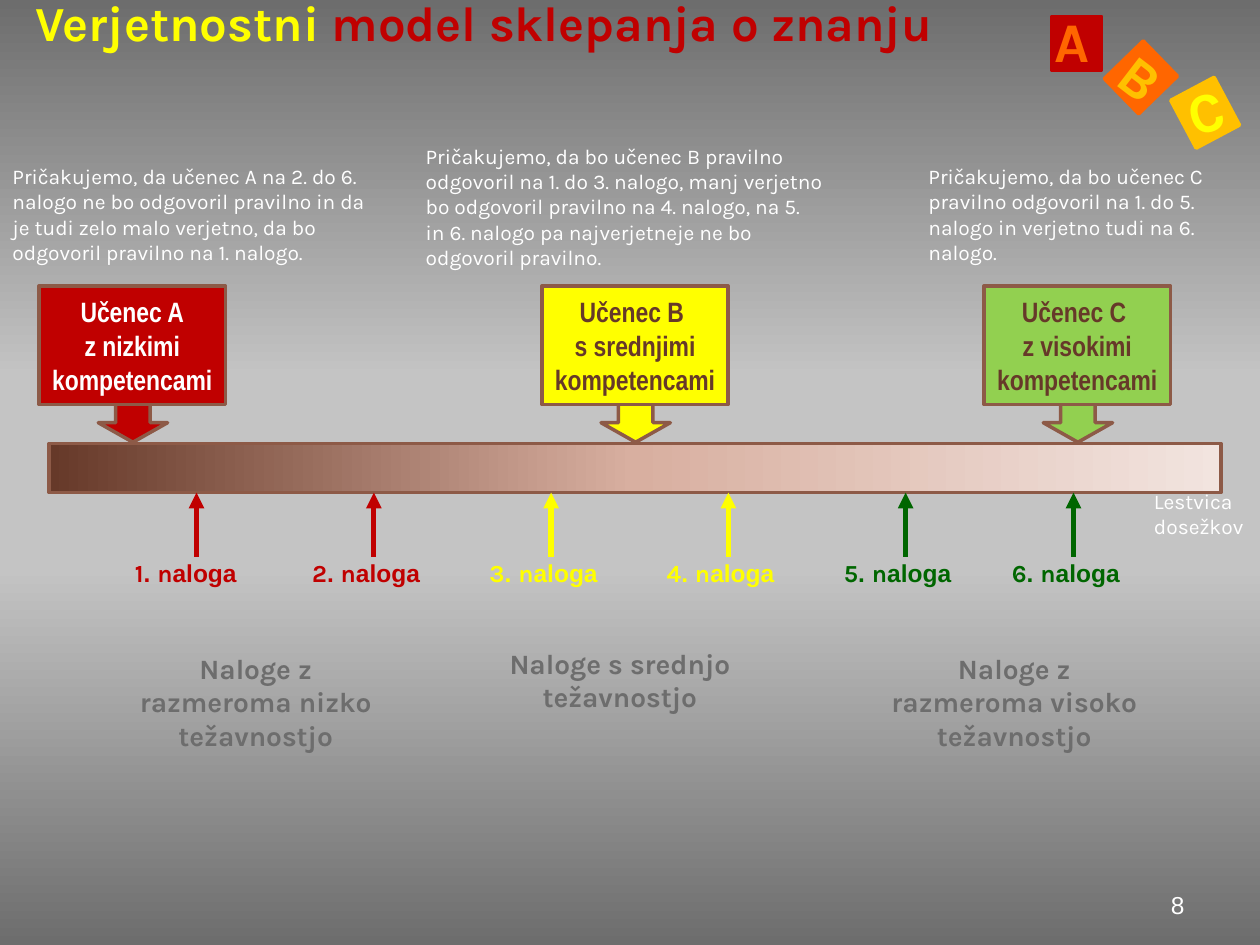
from dataclasses import dataclass
from lxml import etree
from pptx import Presentation, util as u
from pptx.dml.color import RGBColor
from pptx.enum import shapes as sh, text as tx
from pptx.oxml.ns import qn

COLS, ROWS = 100, 75
RED, GOLD, LEMON, ORANGE = "C00000", "FFC000", "FFFF00", "FF6600"
LIME, GREEN, BROWN, EDGE = "92D050", "006600", "663929", "8D5A47"
WHITE, GREY = "FFFFFF", "6D6D6D"
KARLA, ARIAL, NARROW = "Karla", "Arial", "Arial Narrow"
LEFT, MID, RIGHT = tx.PP_ALIGN.LEFT, tx.PP_ALIGN.CENTER, tx.PP_ALIGN.RIGHT

deck = Presentation()
deck.slide_width, deck.slide_height = u.Inches(10), u.Inches(7.5)
slide = deck.slides.add_slide(deck.slide_layouts[5])


@dataclass
class Box:
    col: float
    row: float
    wide: float
    high: float

    def emu(self) -> tuple:
        dx, dy = deck.slide_width / COLS, deck.slide_height / ROWS
        return (round(self.col * dx), round(self.row * dy),
                round(self.wide * dx), round(self.high * dy))


@dataclass
class Font:
    size: float
    color: str
    name: str = KARLA
    bold: bool = False


@dataclass
class Tile:
    mark: str
    box: Box
    turn: float
    text: Box
    tilt: float
    fill: str
    color: str


@dataclass
class Pupil:
    col: float
    lines: tuple
    fill: str
    color: str
    note: str
    place: Box


@dataclass
class Task:
    col: float
    color: str


@dataclass
class Level:
    words: str
    box: Box


def rgb(code: str) -> RGBColor:
    return RGBColor.from_string(code)


def style(font, look: Font) -> None:
    font.size, font.bold, font.name = u.Pt(look.size), look.bold, look.name
    font.color.rgb = rgb(look.color)


def blend(fill, root, stops: list, angle: float) -> None:
    fill.gradient()
    fill.gradient_angle = angle
    stack = next(root.iter(qn("a:gsLst")))
    for old in list(stack):
        stack.remove(old)
    for share, code in stops:
        stop = etree.SubElement(stack, qn("a:gs"), pos=str(share * 1000))
        etree.SubElement(stop, qn("a:srgbClr"), val=code)


def form(site, kind, box: Box, fill: str, line: str, turn: float = 0):
    item = site.add_shape(kind, *box.emu())
    item.shadow.inherit = False
    item.rotation = turn
    if fill:
        item.fill.solid()
        item.fill.fore_color.rgb = rgb(fill)
    item.line.color.rgb = rgb(line)
    item.line.width = u.Pt(2)
    return item


def write(frame, lines: tuple, look: Font, align=LEFT) -> None:
    frame.word_wrap = True
    frame.text = "\n".join(lines)
    for para in frame.paragraphs:
        para.alignment = align
        style(para.font, look)


def label(site, box: Box, words: str, look: Font, align=LEFT):
    item = site.add_textbox(*box.emu())
    write(item.text_frame, (words,), look, align)
    return item


def draw_tile(site, tile: Tile) -> None:
    form(site, sh.MSO_SHAPE.RECTANGLE, tile.box, tile.fill, tile.fill, tile.turn)
    item = label(site, tile.text, tile.mark, Font(32, tile.color, bold=True))
    item.text_frame.word_wrap = False
    item.rotation = tile.tilt


def draw_pupil(pupil: Pupil) -> None:
    site = slide.shapes.add_group_shape().shapes
    form(site, sh.MSO_SHAPE.DOWN_ARROW, Box(pupil.col + 4.7, 32, 5.5, 3.1),
         pupil.fill, EDGE)
    card = form(site, sh.MSO_SHAPE.RECTANGLE, Box(pupil.col, 22.7, 14.8, 9.4),
                pupil.fill, EDGE)
    frame = card.text_frame
    frame.margin_left = frame.margin_right = u.Inches(0.05)
    frame.vertical_anchor = tx.MSO_ANCHOR.MIDDLE
    write(frame, pupil.lines, Font(16, pupil.color, NARROW, True), MID)
    label(slide.shapes, pupil.place, pupil.note, Font(12, WHITE))


def draw_task(num: int, task: Task) -> None:
    x, y, _, rise = Box(task.col, 39.1, 0, 5.1).emu()
    arrow = slide.shapes.add_connector(
        sh.MSO_CONNECTOR.STRAIGHT, x, y + rise, x, y)
    arrow.line.color.rgb = rgb(task.color)
    arrow.line.width = u.Pt(3)
    etree.SubElement(arrow.line._get_or_add_ln(), qn("a:tailEnd"), type="triangle")
    etree.SubElement(arrow._element.spPr, qn("a:effectLst"))
    item = slide.shapes.add_textbox(*Box(task.col - 6.9, 43.8, 12.5, 4.3).emu())
    frame = item.text_frame
    frame.word_wrap = True
    frame.margin_left = u.Inches(0.2)
    para = frame.paragraphs[0]
    for part, name in ((str(num), KARLA), (". ", ARIAL), ("n", KARLA), ("aloga", ARIAL)):
        run = para.add_run()
        run.text = part
        style(run.font, Font(14, task.color, name, True))


TILES = [
    Tile("C", Box(93.7, 6.8, 3.9, 4.3), 332, Box(93.3, 5.6, 4.7, 6.4), 344, GOLD, LEMON),
    Tile("B", Box(88.6, 4, 3.9, 4.3), 45.8, Box(88.2, 2.9, 4.7, 6.4), 37.6, ORANGE, GOLD),
    Tile("A", Box(83.5, 1.3, 3.9, 4.3), 0, Box(82.7, 0, 4.7, 6.4), 0, RED, ORANGE),
]
PUPILS = [
    Pupil(3.1, ("Učenec A", "z nizkimi kompetencami"), RED, WHITE,
          "Pričakujemo, da učenec A na 2. do 6. nalogo ne bo odgovoril pravilno in da "
          "je tudi zelo malo verjetno, da bo odgovoril pravilno na 1. nalogo.",
          Box(0, 12.5, 30.5, 9.1)),
    Pupil(43, ("Učenec B ", "s srednjimi kompetencami"), LEMON, BROWN,
          "Pričakujemo, da bo učenec B pravilno odgovoril na 1. do 3. nalogo, manj "
          "verjetno bo odgovoril pravilno na 4. nalogo, na 5. in 6. nalogo pa "
          "najverjetneje ne bo odgovoril pravilno.",
          Box(32.8, 10.9, 33.6, 11.1)),
    Pupil(78.1, ("Učenec C ", "z visokimi kompetencami"), LIME, BROWN,
          "Pričakujemo, da bo učenec C pravilno odgovoril na 1. do 5. nalogo in "
          "verjetno tudi na 6. nalogo.",
          Box(72.7, 12.5, 24.2, 9.1)),
]
HUES = (RED, RED, LEMON, LEMON, GREEN)
TASKS = [Task(15.6 + 14.07 * i, hue) for i, hue in enumerate(HUES)]
TASKS.append(Task(85.2, GREEN))
LEVELS = [
    Level("Naloge z razmeroma nizko težavnostjo", Box(8.6, 51.2, 23.4, 9.1)),
    Level("Naloge s srednjo težavnostjo", Box(37.5, 50.8, 23.4, 6.4)),
    Level("Naloge z razmeroma visoko težavnostjo", Box(68.8, 51.2, 23.4, 9.1)),
]


def main() -> None:
    blend(slide.background.fill, slide._element,
          [(0, GREY), (40, "C4C4C4"), (60, "C4C4C4"), (100, GREY)], 270)
    head = slide.shapes.title
    head.left, head.top, head.width, head.height = Box(2.8, 0, 77, 3.4).emu()
    frame = head.text_frame
    frame.auto_size = tx.MSO_AUTO_SIZE.NONE
    frame.margin_left = frame.margin_right = frame.margin_top = frame.margin_bottom = 0
    frame.vertical_anchor = tx.MSO_ANCHOR.MIDDLE
    para = frame.paragraphs[0]
    para.alignment = LEFT
    for part, hue in (("Verjetnostni", LEMON), (" model sklepanja o znanju", RED)):
        run = para.add_run()
        run.text = part
        style(run.font, Font(28, hue, bold=True))
    site = slide.shapes.add_group_shape().shapes
    for tile in TILES:
        draw_tile(site, tile)
    page = label(slide.shapes, Box(71.7, 68.3, 23.3, 5.2), "8", Font(14, WHITE, ARIAL), RIGHT)
    page.text_frame.vertical_anchor = tx.MSO_ANCHOR.BOTTOM
    bar = form(slide.shapes, sh.MSO_SHAPE.RECTANGLE, Box(3.9, 35.2, 93, 3.9), "", EDGE)
    blend(bar.fill, bar._element, [(0, BROWN), (50, "D8AFA0"), (100, "F2E4DF")], 0)
    scale = label(slide.shapes, Box(90.6, 38.3, 9.4, 5), "Lestvica dosežkov", Font(12, WHITE))
    scale.text_frame.margin_right = 0
    for pupil in PUPILS:
        draw_pupil(pupil)
    for num, task in enumerate(TASKS, 1):
        draw_task(num, task)
    for level in LEVELS:
        label(slide.shapes, level.box, level.words, Font(16, GREY, bold=True), MID)
    deck.save("out.pptx")


if __name__ == "__main__":
    main()
